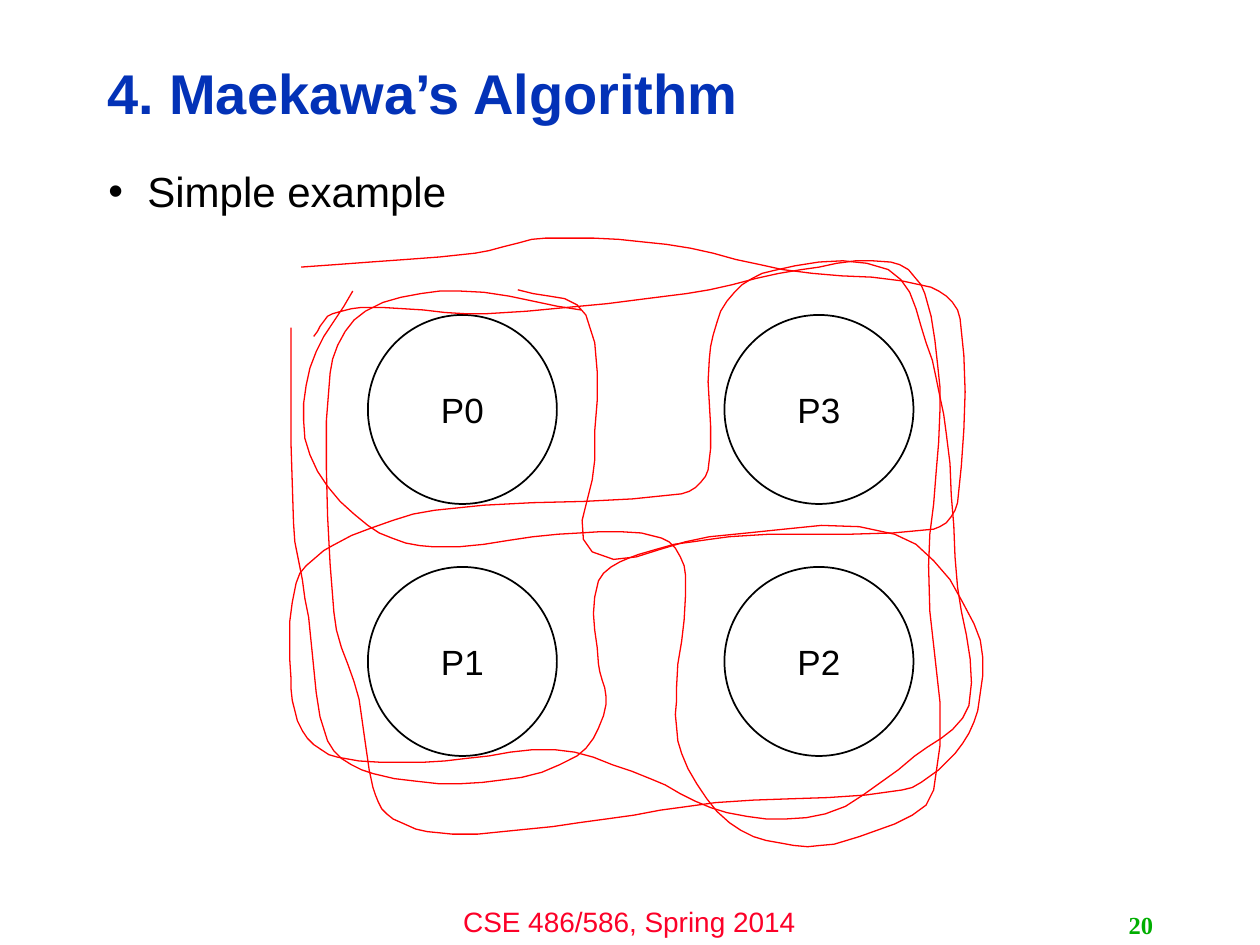
from dataclasses import dataclass
from math import dist

from lxml.etree import SubElement
from pptx import Presentation
from pptx.dml.color import RGBColor
from pptx.enum.shapes import MSO_SHAPE
from pptx.enum.text import MSO_ANCHOR, MSO_AUTO_SIZE, PP_ALIGN
from pptx.oxml.ns import qn
from pptx.util import Pt

EMU_PER_PX = 9144
BLACK, WHITE, RED = "000000", "FFFFFF", "FF0000"
DIAMETER = 150
CURVE_STEPS = 5

Point = tuple[float, float]


@dataclass(frozen=True)
class Process:
    name: str
    column: int
    row: int


@dataclass(frozen=True)
class Stroke:
    points: list[Point]
    closed: bool = False


PROCESSES = [
    Process("P0", 0, 0),
    Process("P1", 0, 1),
    Process("P2", 1, 1),
    Process("P3", 1, 0),
]

VOTING_SETS = [
    Stroke([
        (239, 212), (377, 201), (433, 189), (529, 194), (621, 214), (739, 228), (762, 253),
        (760, 399), (741, 420), (579, 426), (507, 440), (475, 461), (475, 527), (481, 559),
        (458, 600), (383, 621), (296, 614), (260, 588), (245, 490), (233, 415), (231, 260),
    ]),
    Stroke([
        (577, 239), (613, 215), (705, 214), (735, 272), (751, 344), (760, 466), (769, 560),
        (726, 600), (655, 646), (577, 645), (516, 618), (440, 595), (353, 604), (268, 601),
        (240, 580), (231, 539), (235, 463), (264, 433), (345, 405), (541, 392), (562, 373),
        (563, 285),
    ], closed=True),
    Stroke([
        (461, 246), (365, 231), (290, 247), (262, 296), (265, 486), (285, 555), (296, 625),
        (312, 650), (359, 662), (459, 653), (568, 637), (716, 627), (751, 605), (776, 564),
        (773, 495), (710, 424), (563, 426), (470, 438), (472, 365), (465, 250), (411, 230),
    ]),
    Stroke([
        (280, 231), (246, 292), (246, 361), (292, 417), (344, 434), (443, 424), (525, 427),
        (544, 456), (537, 545), (541, 598), (579, 653), (630, 671), (682, 664), (741, 627),
        (737, 449), (746, 326), (734, 233), (707, 208), (636, 214), (545, 233), (386, 249),
        (303, 244), (264, 249), (249, 267),
    ]),
]


def px(length: int) -> int:
    return length * EMU_PER_PX


def color(value: str) -> RGBColor:
    return RGBColor.from_string(value)


def place(shape, left: int, top: int, width: int, height: int) -> None:
    shape.left, shape.top = px(left), px(top)
    shape.width, shape.height = px(width), px(height)


def write_text(shape, text: str, *, size: int, ink: str, font: str = "Arial",
               bold: bool = False, align=PP_ALIGN.LEFT, anchor=MSO_ANCHOR.TOP,
               spacing: float = 1.0):
    frame = shape.text_frame
    frame.auto_size = MSO_AUTO_SIZE.NONE
    frame.word_wrap = True
    frame.vertical_anchor = anchor
    para = frame.paragraphs[0]
    para.alignment = align
    para.line_spacing = spacing
    para.space_before = Pt(0)
    span = para.add_run()
    span.text = text
    span.font.name, span.font.size, span.font.bold = font, Pt(size), bold
    span.font.color.rgb = color(ink)
    return para


def add_bullet(para, indent: int) -> None:
    properties = para._p.get_or_add_pPr()
    properties.set("marL", str(px(indent)))
    properties.set("indent", str(-px(indent)))
    SubElement(properties, qn("a:buChar")).set("char", "•")


def draw_process(page, process: Process) -> None:
    left, top = 292 + 283 * process.column, 250 + 200 * process.row
    circle = page.shapes.add_shape(MSO_SHAPE.OVAL, px(left), px(top), px(DIAMETER), px(DIAMETER))
    circle.shadow.inherit = False
    circle.fill.solid()
    circle.fill.fore_color.rgb = color(WHITE)
    circle.line.color.rgb = color(BLACK)
    circle.line.width = Pt(1)
    write_text(circle, process.name, size=20, ink=BLACK,
               align=PP_ALIGN.CENTER, anchor=MSO_ANCHOR.MIDDLE)


def smooth_points(stroke: Stroke) -> list[Point]:
    points = stroke.points
    if stroke.closed:
        padded = [points[-1], *points, *points[:2]]
    else:
        padded = [points[0], *points, points[-1]]
    curve = [points[0]]
    for before, start, end, after in zip(padded, padded[1:], padded[2:], padded[3:]):
        length = dist(start, end)
        leave, arrive = length / dist(before, end), length / dist(start, after)
        for step in range(1, CURVE_STEPS + 1):
            t = step / CURVE_STEPS
            ease = t * t * (3 - 2 * t)
            curve.append(tuple(
                a + (b - a) * ease
                + t * (1 - t) ** 2 * leave * (b - previous)
                - t * t * (1 - t) * arrive * (following - a)
                for previous, a, b, following in zip(before, start, end, after)
            ))
    return curve


def draw_stroke(page, stroke: Stroke) -> None:
    start, *rest = smooth_points(stroke)
    builder = page.shapes.build_freeform(*start, scale=EMU_PER_PX)
    builder.add_line_segments(rest, close=stroke.closed)
    outline = builder.convert_to_shape()
    outline.shadow.inherit = False
    outline.fill.background()
    outline.line.color.rgb = color(RED)
    outline.line.width = Pt(0.75)


def main() -> None:
    deck = Presentation()
    deck.slide_width, deck.slide_height = px(1000), px(750)
    page = deck.slides.add_slide(deck.slide_layouts[1])

    title, body = page.placeholders
    place(title, 75, 36, 798, 81)
    write_text(title, "4. Maekawa’s Algorithm", size=32, ink="0332B7", bold=True,
               anchor=MSO_ANCHOR.MIDDLE, spacing=0.9)
    place(body, 76, 131, 840, 539)
    add_bullet(write_text(body, "Simple example", size=24, ink=BLACK, spacing=0.9), 31)

    footer = page.shapes.add_textbox(px(333), px(713), px(333), px(37))
    write_text(footer, "CSE 486/586, Spring 2014", size=16, ink="FC0128", align=PP_ALIGN.CENTER)
    number = page.shapes.add_textbox(px(717), px(718), px(208), px(32))
    write_text(number, "20", size=14, ink="00AE00", font="Times New Roman", bold=True,
               align=PP_ALIGN.RIGHT, anchor=MSO_ANCHOR.MIDDLE)

    for process in PROCESSES:
        draw_process(page, process)
    for stroke in VOTING_SETS:
        draw_stroke(page, stroke)
    deck.save("out.pptx")


if __name__ == "__main__":
    main()
